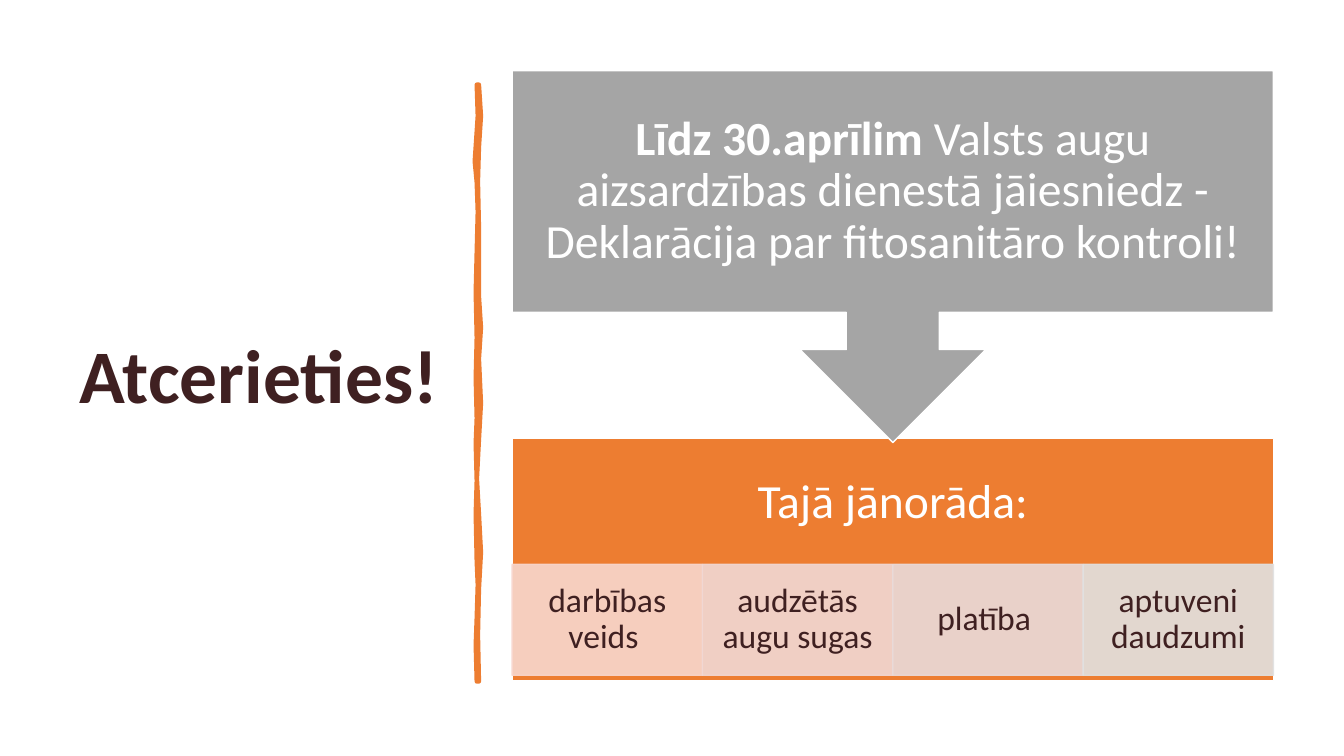
from lxml import etree
from pptx import Presentation
from pptx import util as u
from pptx.dml.color import RGBColor
from pptx.enum import shapes, text
from pptx.oxml.ns import qn

PX = 9144
FONT = "Calibri"
DARK, WHITE, ORANGE, GREY = "3F2021", "FFFFFF", "ED7D31", "A5A5A5"

TITLE = [("Atcerieties!", True)]
DEADLINE = [
    ("Līdz 30.aprīlim ", True),
    ("Valsts augu aizsardzības dienestā jāiesniedz - Deklarācija par fitosanitāro kontroli!", False),
]
HEADING = [("Tajā jānorāda:", False)]
DETAILS = [
    ("darbības veids ", "F8D7CE"),
    ("audzētās augu sugas", "F1D8D4"),
    ("platība ", "E9DBDA"),
    ("aptuveni daudzumi", "E1E1E1"),
]

TITLE_BOX = (69, 70, 395, 611)
CALLOUT_BOX = (508, 70, 755, 369)
DEADLINE_BOX = (508, 70, 755, 240)
PANEL_BOX = (508, 435, 755, 240)
DETAIL_TOP, DETAIL_HEIGHT = 560, 110
HEADING_HEIGHT = 129

RIGHT_EDGE = [(475, 84), (477, 115), (475, 146), (474, 180), (475, 226), (475, 294),
              (477, 325), (475, 356), (477, 400), (475, 436), (473, 475), (475, 510),
              (477, 548), (475, 584), (474, 630), (475, 676)]
LEFT_EDGE = [(473, 676), (472, 640), (473, 613), (474, 580), (473, 557), (472, 510),
             (473, 477), (472, 440), (473, 415), (472, 375), (473, 335), (472, 290),
             (473, 250), (474, 210), (473, 181), (471, 160), (474, 115), (473, 84)]


def color(value):
    return RGBColor.from_string(value)


def emu(box):
    return [round(length * PX) for length in box]


def paint(shape, fill, line, width, opacity=None):
    shape.shadow.inherit = False
    shape.fill.solid()
    shape.fill.fore_color.rgb = color(fill)
    shape.line.color.rgb = color(line)
    shape.line.width = u.Pt(width)
    if opacity:
        for node in shape._element.spPr.iter(qn("a:srgbClr")):
            etree.SubElement(node, qn("a:alpha")).set("val", str(opacity * 1000))


def write(shape, runs, size, ink, insets, align=text.PP_ALIGN.CENTER):
    frame = shape.text_frame
    left, top, right, bottom = emu(insets)
    frame_format = {
        "word_wrap": True, "vertical_anchor": text.MSO_ANCHOR.MIDDLE,
        "margin_left": left, "margin_top": top,
        "margin_right": right, "margin_bottom": bottom,
    }
    for name, value in frame_format.items():
        setattr(frame, name, value)
    paragraph = frame.paragraphs[0]
    paragraph.alignment = align
    paragraph.line_spacing = 0.9
    for wording, bold in runs:
        run = paragraph.add_run()
        run.text = wording
        run.font.color.rgb = color(ink)
        for name, value in {"name": FONT, "size": u.Pt(size), "bold": bold}.items():
            setattr(run.font, name, value)


presentation = Presentation()
presentation.slide_width, presentation.slide_height = emu((1333, 750))
slide = presentation.slides.add_slide(presentation.slide_layouts[6])
items = slide.shapes

title = items.add_textbox(*emu(TITLE_BOX))
write(title, TITLE, 54, DARK, (10, 5, 10, 5), text.PP_ALIGN.LEFT)

builder = items.build_freeform(*RIGHT_EDGE[0], scale=PX)
builder.add_line_segments(RIGHT_EDGE[1:] + LEFT_EDGE, close=True)
divider = builder.convert_to_shape()
paint(divider, ORANGE, ORANGE, 3.25)

panel = items.add_shape(shapes.MSO_SHAPE.RECTANGLE, *emu(PANEL_BOX))
paint(panel, ORANGE, WHITE, 1)
write(panel, HEADING, 34, WHITE, (26, 26, 26, PANEL_BOX[3] - HEADING_HEIGHT + 26))

detail_width = PANEL_BOX[2] / len(DETAILS)
for index, (wording, fill) in enumerate(DETAILS):
    box = (PANEL_BOX[0] + index * detail_width, DETAIL_TOP, detail_width, DETAIL_HEIGHT)
    detail = items.add_shape(shapes.MSO_SHAPE.RECTANGLE, *emu(box))
    paint(detail, fill, fill, 1, opacity=90)
    write(detail, [(wording, False)], 24, DARK, (19, 3, 19, 3))

callout = items.add_shape(shapes.MSO_SHAPE.UP_ARROW_CALLOUT, *emu(CALLOUT_BOX))
callout.rotation = 180
paint(callout, GREY, WHITE, 1)
deadline = items.add_textbox(*emu(DEADLINE_BOX))
write(deadline, DEADLINE, 34, WHITE, (26, 26, 26, 26))

presentation.save("out.pptx")
